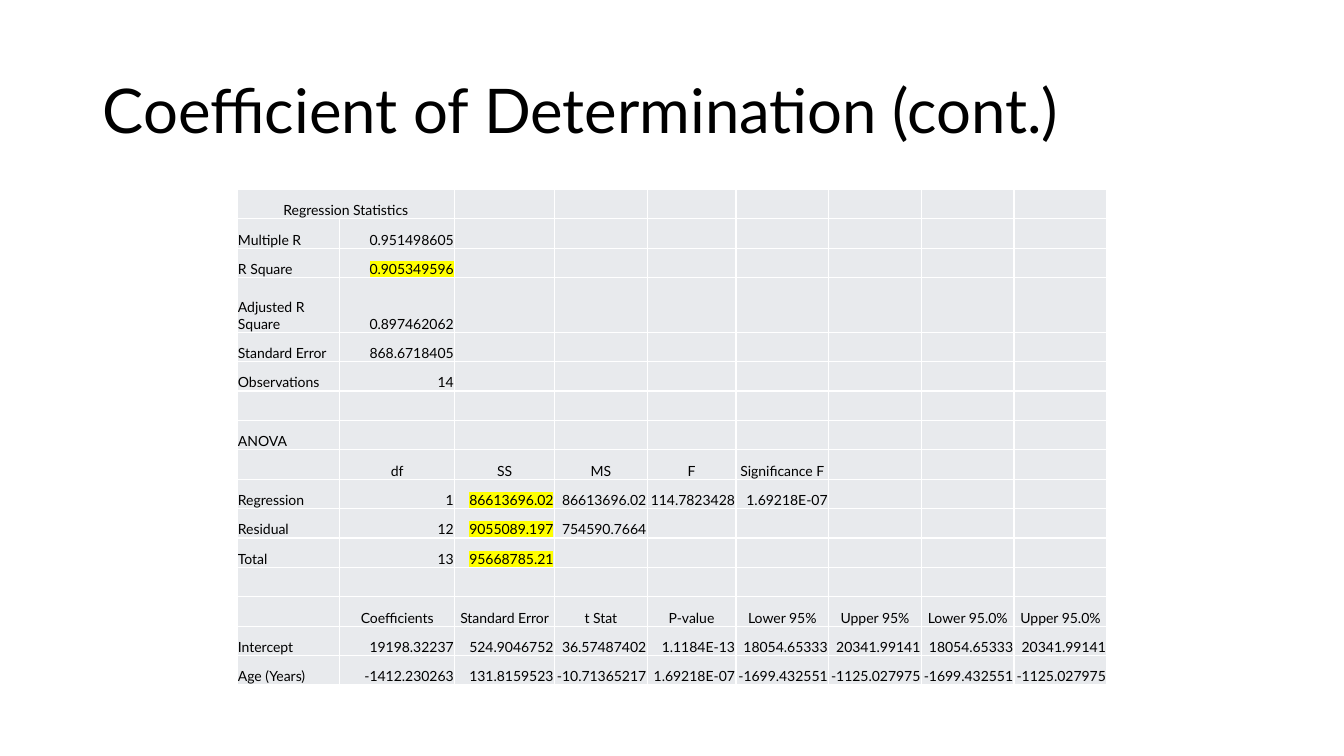
from itertools import product

from lxml.etree import SubElement
from pptx import Presentation
from pptx.dml.color import RGBColor
from pptx.enum.text import MSO_ANCHOR as Anchor, PP_ALIGN as Align
from pptx.oxml import parse_xml
from pptx.oxml.ns import nsdecls, qn
from pptx.util import Inches, Pt

FONT = "Lato"
COLORS = {"text": "000000", "cell": "E8EAED", "border": "FFFFFF", "highlight": "FFFF00"}

TITLE_BOX = (0.92, 0.4, 11.5, 1.45)
TABLE_BOX = (2.35, 1.88, 8.63, 4.92)
COLUMN_WIDTHS = [1.02, 1.14, 0.99, 0.92, 0.88] + [0.92] * 4
TALL_ROW, TALL_HEIGHT = 3, 0.54
HEADER_ROWS = {0, 8, 13}
HIGHLIGHTED = {(2, 1), (9, 2), (10, 2), (11, 2)}

ROWS = [
    ["Regression Statistics"],
    ["Multiple R", "0.951498605"],
    ["R Square", "0.905349596"],
    ["Adjusted R Square", "0.897462062"],
    ["Standard Error", "868.6718405"],
    ["Observations", "14"],
    [],
    ["ANOVA"],
    ["", "df", "SS", "MS", "F", "Significance F"],
    ["Regression", "1", "86613696.02", "86613696.02", "114.7823428", "1.69218E-07"],
    ["Residual", "12", "9055089.197", "754590.7664"],
    ["Total", "13", "95668785.21"],
    [],
    ["", "Coefficients", "Standard Error", "t Stat", "P-value",
     "Lower 95%", "Upper 95%", "Lower 95.0%", "Upper 95.0%"],
    ["Intercept", "19198.32237", "524.9046752", "36.57487402", "1.1184E-13",
     "18054.65333", "20341.99141", "18054.65333", "20341.99141"],
    ["Age (Years)", "-1412.230263", "131.8159523", "-10.71365217", "1.69218E-07",
     "-1699.432551", "-1125.027975", "-1699.432551", "-1125.027975"],
]


def add_run(paragraph, text, size):
    run = paragraph.add_run()
    run.text = text
    run.font.size = Pt(size)
    run.font.name = FONT
    run.font.color.rgb = RGBColor.from_string(COLORS["text"])
    return run


def highlight(run):
    mark = parse_xml(f'<a:highlight {nsdecls("a")}><a:srgbClr val="{COLORS["highlight"]}"/></a:highlight>')
    run.font._element.find(qn("a:solidFill")).addnext(mark)


def style_cell(cell):
    cell.fill.solid()
    cell.fill.fore_color.rgb = RGBColor.from_string(COLORS["cell"])
    cell.vertical_anchor = Anchor.BOTTOM
    cell.margin_left = cell.margin_right = cell.margin_top = Inches(0.01)
    cell.margin_bottom = 0
    # Borders come before the fill in the cell properties
    properties = cell._tc.get_or_add_tcPr()
    for index, side in enumerate(("lnL", "lnR", "lnT", "lnB")):
        border = parse_xml(
            f'<a:{side} {nsdecls("a")} w="{Pt(1)}"><a:solidFill>'
            f'<a:srgbClr val="{COLORS["border"]}"/></a:solidFill></a:{side}>')
        properties.insert(index, border)


def fill_cell(cell, row, column, text):
    paragraph = cell.text_frame.paragraphs[0]
    if not text:
        # Small end mark keeps empty rows from growing
        SubElement(paragraph._p, qn("a:endParaRPr"), sz="1000")
        return
    if row in HEADER_ROWS:
        paragraph.alignment = Align.CENTER
    else:
        paragraph.alignment = Align.RIGHT if column else Align.LEFT
    run = add_run(paragraph, text, 10)
    if (row, column) in HIGHLIGHTED:
        highlight(run)


def add_title(slide, box):
    frame = slide.shapes.add_textbox(*map(Inches, box)).text_frame
    frame.word_wrap = True
    frame.vertical_anchor = Anchor.MIDDLE
    paragraph = frame.paragraphs[0]
    paragraph.line_spacing = 0.9
    add_run(paragraph, "Coefficient of Determination (cont.)", 44)


def add_regression_table(slide, box):
    row_count, column_count = len(ROWS), len(COLUMN_WIDTHS)
    table = slide.shapes.add_table(row_count, column_count, *map(Inches, box)).table
    table.first_row = table.horz_banding = False
    for column, width in zip(table.columns, COLUMN_WIDTHS):
        column.width = Inches(width)
    row_height = (box[3] - TALL_HEIGHT) / (row_count - 1)
    for index, row in enumerate(table.rows):
        row.height = Inches(TALL_HEIGHT if index == TALL_ROW else row_height)
    for row, column in product(range(row_count), range(column_count)):
        cell = table.cell(row, column)
        style_cell(cell)
        fill_cell(cell, row, column, ROWS[row][column] if column < len(ROWS[row]) else "")
    table.cell(0, 0).merge(table.cell(0, 1))


def main():
    presentation = Presentation()
    presentation.slide_width = Inches(13.33)
    presentation.slide_height = Inches(7.5)
    slide = presentation.slides.add_slide(presentation.slide_layouts[6])
    add_title(slide, TITLE_BOX)
    add_regression_table(slide, TABLE_BOX)
    presentation.save("out.pptx")


if __name__ == "__main__":
    main()
